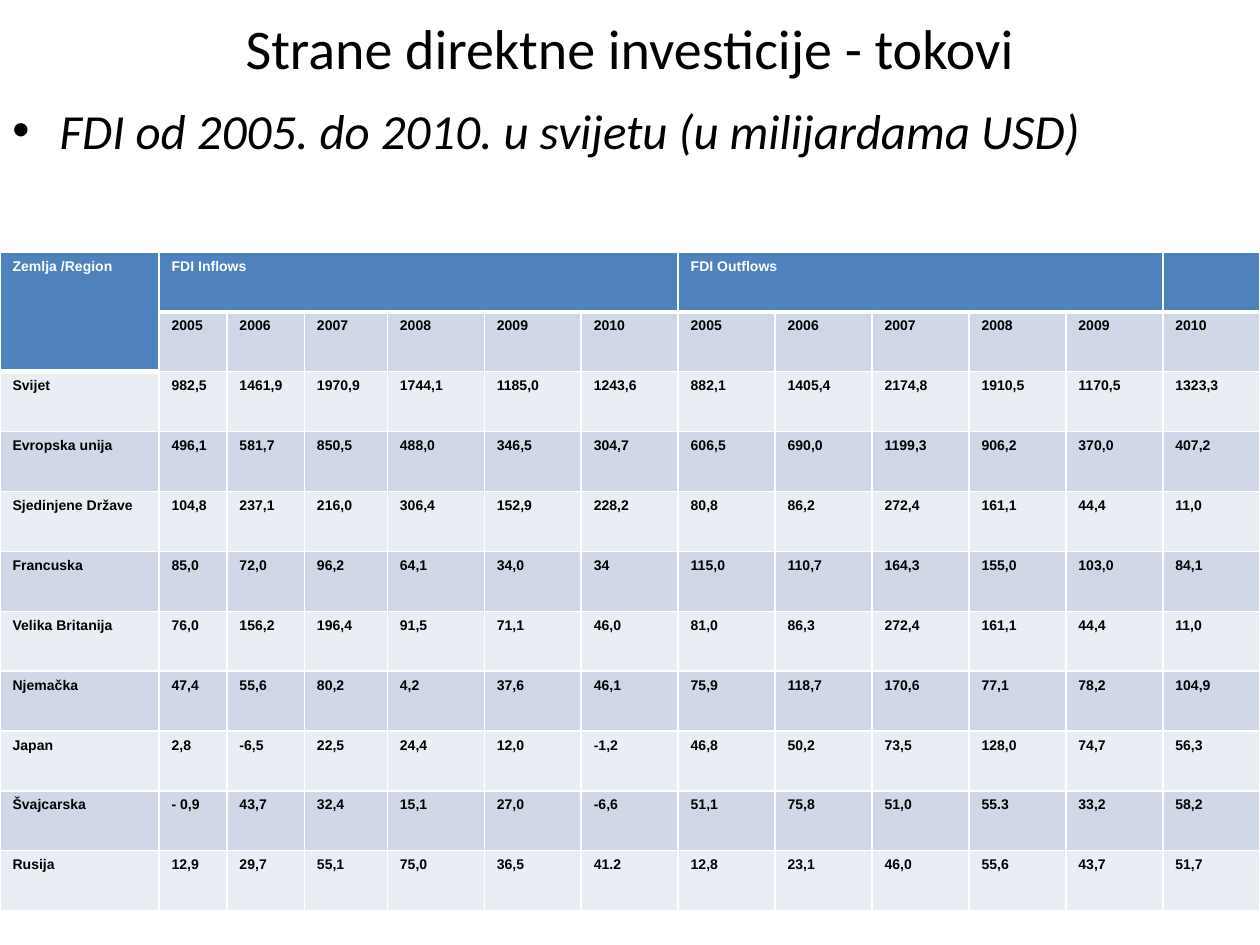
from dataclasses import dataclass

from lxml.etree import SubElement
from pptx import Presentation
from pptx.dml.color import RGBColor
from pptx.enum.text import MSO_ANCHOR, PP_ALIGN
from pptx.oxml.ns import qn
from pptx.util import Pt

BLACK = RGBColor(0x00, 0x00, 0x00)
WHITE = RGBColor(0xFF, 0xFF, 0xFF)
HEADER_BLUE = RGBColor(0x4F, 0x81, 0xBD)
BAND_DARK = RGBColor(0xD0, 0xD8, 0xE8)
BAND_LIGHT = RGBColor(0xE9, 0xED, 0xF4)

SLIDE_W, SLIDE_H = 720, 540
TITLE_H = 54
TABLE_TOP, ROW_H = 144, 34.24
COL_WIDTHS = [90.9, 38.8, 44.3, 47.4] + [55.4] * 9
THIN, THICK = 1, 3
YEARS = ["2005", "2006", "2007", "2008", "2009", "2010"]


@dataclass
class Country:
    name: str
    inflows: str
    outflows: str

    def cells(self) -> list[str]:
        return [self.name, *self.inflows.split("|"), *self.outflows.split("|")]


COUNTRIES = [
    Country("Svijet", "982,5|1461,9|1970,9|1744,1|1185,0|1243,6",
            "882,1|1405,4|2174,8|1910,5|1170,5|1323,3"),
    Country("Evropska unija", "496,1|581,7|850,5|488,0|346,5|304,7",
            "606,5|690,0|1199,3|906,2|370,0|407,2"),
    Country("Sjedinjene Države", "104,8|237,1|216,0|306,4|152,9|228,2",
            "80,8|86,2|272,4|161,1|44,4|11,0"),
    Country("Francuska", "85,0|72,0|96,2|64,1|34,0|34",
            "115,0|110,7|164,3|155,0|103,0|84,1"),
    Country("Velika Britanija", "76,0|156,2|196,4|91,5|71,1|46,0",
            "81,0|86,3|272,4|161,1|44,4|11,0"),
    Country("Njemačka", "47,4|55,6|80,2|4,2|37,6|46,1",
            "75,9|118,7|170,6|77,1|78,2|104,9"),
    Country("Japan", "2,8|-6,5|22,5|24,4|12,0|-1,2",
            "46,8|50,2|73,5|128,0|74,7|56,3"),
    Country("Švajcarska", "- 0,9|43,7|32,4|15,1|27,0|-6,6",
            "51,1|75,8|51,0|55.3|33,2|58,2"),
    Country("Rusija", "12,9|29,7|55,1|75,0|36,5|41.2",
            "12,8|23,1|46,0|55,6|43,7|51,7"),
]


def write(tf, text: str, *, size: float, font: str = "Calibri", color: RGBColor = BLACK,
          bold: bool = False, italic: bool = False, align=PP_ALIGN.LEFT):
    """Put one formatted run in the first paragraph and return the paragraph."""
    p = tf.paragraphs[0]
    p.alignment = align
    r = p.add_run()
    r.text = text
    r.font.name, r.font.size = font, Pt(size)
    r.font.bold, r.font.italic = bold, italic
    r.font.color.rgb = color
    return p


def add_bullet(p, indent: float) -> None:
    p_pr = p._p.get_or_add_pPr()
    p_pr.set("marL", str(Pt(indent)))
    p_pr.set("indent", str(-Pt(indent)))
    SubElement(p_pr, qn("a:buFont")).set("typeface", "Arial")
    SubElement(p_pr, qn("a:buChar")).set("char", "•")


def set_borders(cell, top: float, bottom: float) -> None:
    tc_pr = cell._tc.get_or_add_tcPr()
    for side, width in (("L", THIN), ("R", THIN), ("T", top), ("B", bottom)):
        ln = SubElement(tc_pr, qn(f"a:ln{side}"))
        ln.set("w", str(Pt(width)))
        fill = SubElement(ln, qn("a:solidFill"))
        SubElement(fill, qn("a:srgbClr")).set("val", str(WHITE))


def is_header(row: int, col: int) -> bool:
    return row == 0 or (row == 1 and col == 0)


def style_cell(cell, row: int, col: int, text: str) -> None:
    header = is_header(row, col)
    below_header = row > 0 and not header and is_header(row - 1, col)
    set_borders(cell, THICK if below_header else THIN, THICK if header else THIN)
    cell.fill.solid()
    band = BAND_DARK if row % 2 else BAND_LIGHT
    cell.fill.fore_color.rgb = HEADER_BLUE if header else band
    if text:
        write(cell.text_frame, text, size=8, font="Arial", bold=True,
              color=WHITE if header else BLACK)


def add_fdi_table(s) -> None:
    rows = [
        ["Zemlja /Region", "FDI Inflows", *[""] * 5, "FDI Outflows", *[""] * 5],
        ["", *YEARS, *YEARS],
        *[country.cells() for country in COUNTRIES],
    ]
    table = s.shapes.add_table(len(rows), len(COL_WIDTHS), Pt(0), Pt(TABLE_TOP),
                               Pt(SLIDE_W), Pt(ROW_H * len(rows))).table
    table.horz_banding = False
    table.first_row = False
    for column, width in zip(table.columns, COL_WIDTHS):
        column.width = Pt(width)
    for i, texts in enumerate(rows):
        table.rows[i].height = Pt(ROW_H)
        for j, text in enumerate(texts):
            style_cell(table.cell(i, j), i, j, text)

    # Header spans: region, inflows, outflows
    for first, last in (((0, 0), (1, 0)), ((0, 1), (0, 6)), ((0, 7), (0, 11))):
        table.cell(*first).merge(table.cell(*last))


def main() -> None:
    prs = Presentation()
    prs.slide_width, prs.slide_height = Pt(SLIDE_W), Pt(SLIDE_H)
    s = prs.slides.add_slide(prs.slide_layouts[5])

    # Title
    title = s.shapes.title
    title.left, title.top, title.width, title.height = Pt(0), Pt(0), Pt(SLIDE_W), Pt(TITLE_H)
    title.text_frame.vertical_anchor = MSO_ANCHOR.MIDDLE
    write(title.text_frame, "Strane direktne investicije - tokovi", size=32,
          align=PP_ALIGN.CENTER)

    # Bulleted subtitle
    sp = s.shapes.add_textbox(Pt(0), Pt(TITLE_H), Pt(SLIDE_W), Pt(474))
    tf = sp.text_frame
    tf.word_wrap = True
    p = write(tf, "FDI od 2005. do 2010. u svijetu (u milijardama USD)", size=28, italic=True)
    p.space_before = Pt(5.6)
    add_bullet(p, 27)

    # Table of flows by country
    add_fdi_table(s)

    prs.save("out.pptx")


if __name__ == "__main__":
    main()
